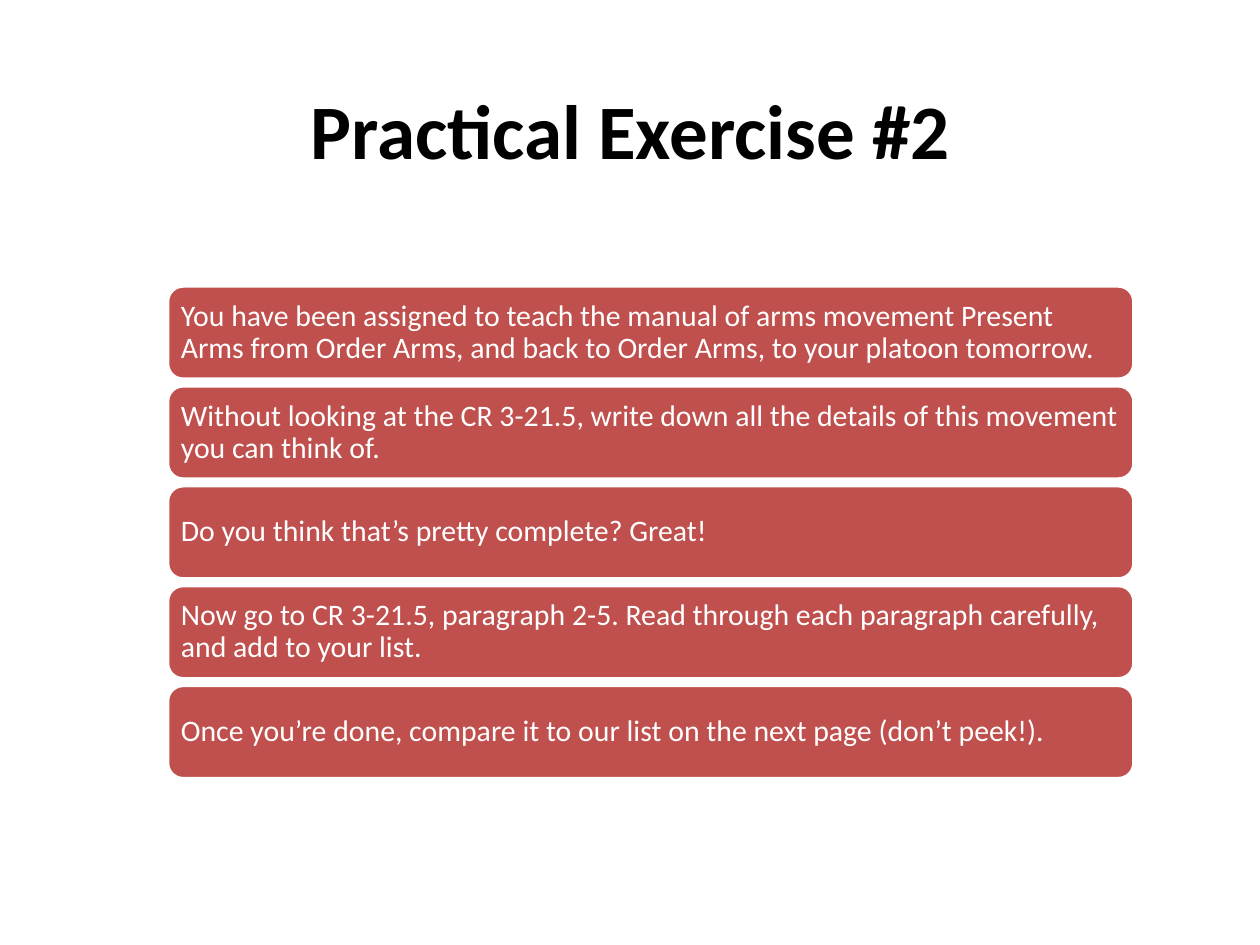
from pptx import Presentation
from pptx.dml.color import RGBColor
from pptx.enum.shapes import MSO_SHAPE
from pptx.enum.text import MSO_ANCHOR, PP_ALIGN
from pptx.util import Inches, Pt

COLORS = {"title": "000000", "bar": "C0504D", "white": "FFFFFF"}
FONT = "Calibri"
STEPS = [
    "You have been assigned to teach the manual of arms movement Present Arms "
    "from Order Arms, and back to Order Arms, to your platoon tomorrow.",
    "Without looking at the CR 3-21.5, write down all the details of this "
    "movement you can think of.",
    "Do you think that’s pretty complete? Great!",
    "Now go to CR 3-21.5, paragraph 2-5. Read through each paragraph carefully, "
    "and add to your list.",
    "Once you’re done, compare it to our list on the next page (don’t peek!).",
]


def add_run(paragraph, text, size, color, bold=False):
    run = paragraph.add_run()
    run.text = text
    run.font.name = FONT
    run.font.size = Pt(size)
    run.font.bold = bold
    run.font.color.rgb = RGBColor.from_string(COLORS[color])


presentation = Presentation()
presentation.slide_width = Inches(10)
presentation.slide_height = Inches(7.5)
slide = presentation.slides.add_slide(presentation.slide_layouts[5])

# Title
title = slide.shapes.title
title.left, title.top = Inches(1.17), Inches(0.3)
title.width, title.height = Inches(7.67), Inches(1.45)
title.text_frame.vertical_anchor = MSO_ANCHOR.MIDDLE
paragraph = title.text_frame.paragraphs[0]
paragraph.alignment = PP_ALIGN.CENTER
add_run(paragraph, "Practical Exercise #2", 44, "title", bold=True)

# Stack of exercise steps
first_top, bar_height, pitch = Inches(2.27), Inches(0.74), Inches(3.17) / 4
for index, step in enumerate(STEPS):
    bar = slide.shapes.add_shape(
        MSO_SHAPE.ROUNDED_RECTANGLE,
        Inches(1.33), round(first_top + index * pitch), Inches(7.67), bar_height)
    bar.shadow.inherit = False
    bar.fill.solid()
    bar.fill.fore_color.rgb = RGBColor.from_string(COLORS["bar"])
    bar.line.color.rgb = RGBColor.from_string(COLORS["white"])
    bar.line.width = Pt(2)

    frame = bar.text_frame
    frame.word_wrap = True
    frame.vertical_anchor = MSO_ANCHOR.MIDDLE
    frame.margin_left = frame.margin_right = Inches(0.07)
    frame.margin_top = frame.margin_bottom = Inches(0.07)
    paragraph = frame.paragraphs[0]
    paragraph.alignment = PP_ALIGN.LEFT
    paragraph.line_spacing = 0.9
    add_run(paragraph, step, 17, "white")

presentation.save("out.pptx")
